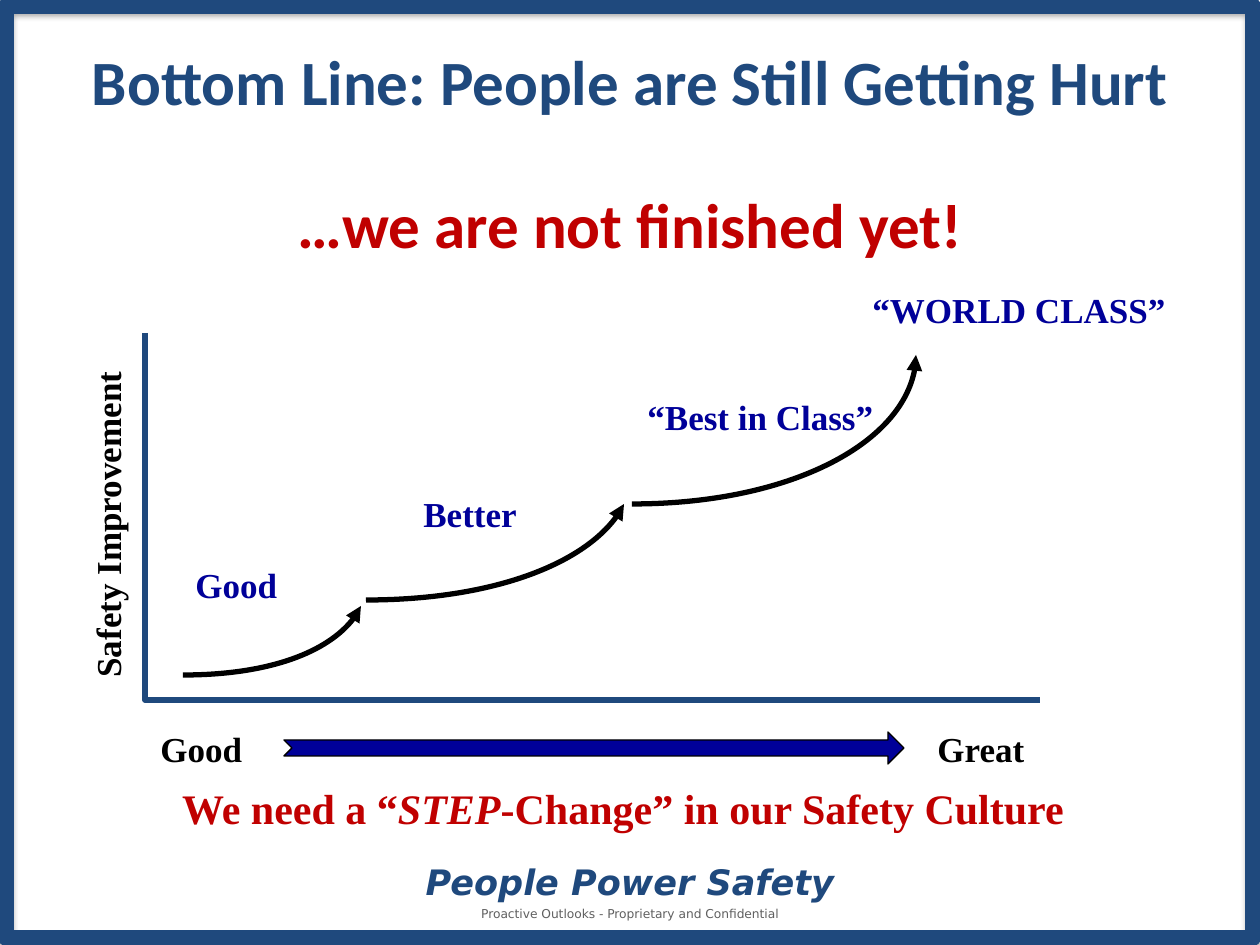
import pptx
import pptx.dml.color
import pptx.enum.shapes
import pptx.enum.text
import pptx.oxml
import pptx.oxml.ns
import pptx.util

RGB = pptx.dml.color.RGBColor
NAVY = RGB(0x1F, 0x49, 0x7D)
BLUE = RGB(0x00, 0x00, 0x99)
RED = RGB(0xC0, 0x00, 0x00)
BLACK = RGB(0x00, 0x00, 0x00)
GREY = RGB(0x60, 0x60, 0x60)
SERIF, SANS, BRAND = "Times New Roman", "Calibri", "DejaVu Sans"
SHAPES = pptx.enum.shapes.MSO_SHAPE
MIDDLE = pptx.enum.text.MSO_ANCHOR.MIDDLE
CENTER = pptx.enum.text.PP_ALIGN.CENTER
LEFT = pptx.enum.text.PP_ALIGN.LEFT
qn = pptx.oxml.ns.qn


def px(length):
    return pptx.util.Emu(round(length * 914400 / 126))


class SlideBuilder:
    """Draws styled elements, measured in px, on the current slide."""

    def __init__(self, slide):
        self.slide = slide

    def style(self, shape, fill, line, width):
        shape.shadow.inherit = False
        if fill is None:
            shape.fill.background()
        else:
            shape.fill.solid()
            shape.fill.fore_color.rgb = fill
        shape.line.color.rgb = line
        shape.line.width = pptx.util.Pt(width)
        return shape

    def shape(self, kind, left, top, width, height, fill, line, line_width):
        shape = self.slide.shapes.add_shape(kind, px(left), px(top), px(width), px(height))
        return self.style(shape, fill, line, line_width)

    def frame(self, left, top, width, height):
        shape = self.shape(SHAPES.RECTANGLE, left, top, width, height, None, NAVY, 8.75)
        effects = shape._element.spPr.find(qn("a:effectLst"))
        effects.append(pptx.oxml.parse_xml(
            f'<a:outerShdw {pptx.oxml.ns.nsdecls("a")} blurRad="39370" dist="22860" dir="5400000" '
            'rotWithShape="0"><a:srgbClr val="000000"><a:alpha val="35000"/></a:srgbClr></a:outerShdw>'))

    def outline(self, points, color):
        start, *rest = [(px(x), px(y)) for x, y in points]
        builder = self.slide.shapes.build_freeform(*start)
        builder.add_line_segments(rest, close=False)
        return self.style(builder.convert_to_shape(), None, color, 3)

    def curve_arrow(self, start, first_control, second_control, end):
        shape = self.outline([start, first_control, second_control, end], BLACK)
        path = shape._element.spPr.find(".//" + qn("a:path"))
        curve = path.makeelement(qn("a:cubicBezTo"), {})
        for segment in path.findall(qn("a:lnTo")):
            curve.append(segment[0])
            path.remove(segment)
        path.append(curve)
        line = shape._element.spPr.find(qn("a:ln"))
        line.append(line.makeelement(qn("a:tailEnd"), {"type": "triangle"}))

    def text(self, words, left, top, width, height, size, color, font, bold=True, italic=None,
             align=CENTER, anchor=None):
        box = self.slide.shapes.add_textbox(px(left), px(top), px(width), px(height))
        frame = box.text_frame
        frame.word_wrap = True
        frame.vertical_anchor = anchor
        para = frame.paragraphs[0]
        para.alignment = align
        para.font.name = font
        para.font.size = pptx.util.Pt(size)
        para.font.color.rgb = color
        para.font.bold = bold
        para.font.italic = italic
        spans = [(words, None)] if isinstance(words, str) else words
        for content, slanted in spans:
            span = para.add_run()
            span.text = content
            span.font.italic = slanted
        return box

    def label(self, words, left, top, width, color):
        return self.text(words, left, top, width, 55, 20, color, SERIF, align=LEFT)


def main():
    deck = pptx.Presentation()
    deck.slide_width, deck.slide_height = px(1260), px(945)
    page = SlideBuilder(deck.slides.add_slide(deck.slide_layouts[6]))

    page.frame(6, 6, 1247, 932)
    page.text("Proactive Outlooks - Proprietary and Confidential", 417, 900, 426, 28, 7, GREY, BRAND,
              bold=False, anchor=MIDDLE)
    page.text("People Power Safety", 400, 865, 460, 34, 20, NAVY, BRAND, italic=True, anchor=MIDDLE)
    page.text("Bottom Line: People are Still Getting Hurt", 0, 19, 1260, 123, 36, NAVY, SANS,
              anchor=MIDDLE)
    page.text("…we are not finished yet!", 0, 179, 1260, 89, 36, RED, SANS)

    page.curve_arrow((183, 675), (270, 675), (344, 646), (361, 606))
    page.curve_arrow((366, 600), (491, 600), (598, 559), (624, 504))
    page.curve_arrow((632, 504), (789, 504), (916, 437), (916, 355))
    page.outline([(145, 333), (145, 700), (1040, 700)], NAVY)

    page.label("Safety Improvement", -65, 490, 345, BLACK).rotation = 270
    page.label("Good", 183, 557, 117, BLUE)
    page.label("Better", 411, 486, 129, BLUE)
    page.label("“Best in Class”", 635, 389, 260, BLUE)
    page.label("“WORLD CLASS”", 860, 282, 340, BLUE)
    page.label("Good", 148, 721, 117, BLACK)
    page.label("Great", 925, 721, 123, BLACK)

    page.shape(SHAPES.NOTCHED_RIGHT_ARROW, 284, 732, 620, 32, BLUE, BLACK, 0.75)
    page.text([("We need a “", None), ("STEP", True), ("-Change” in our Safety Culture", None)],
              8, 776, 1230, 63, 24, RED, SERIF)

    deck.save("out.pptx")


if __name__ == "__main__":
    main()
